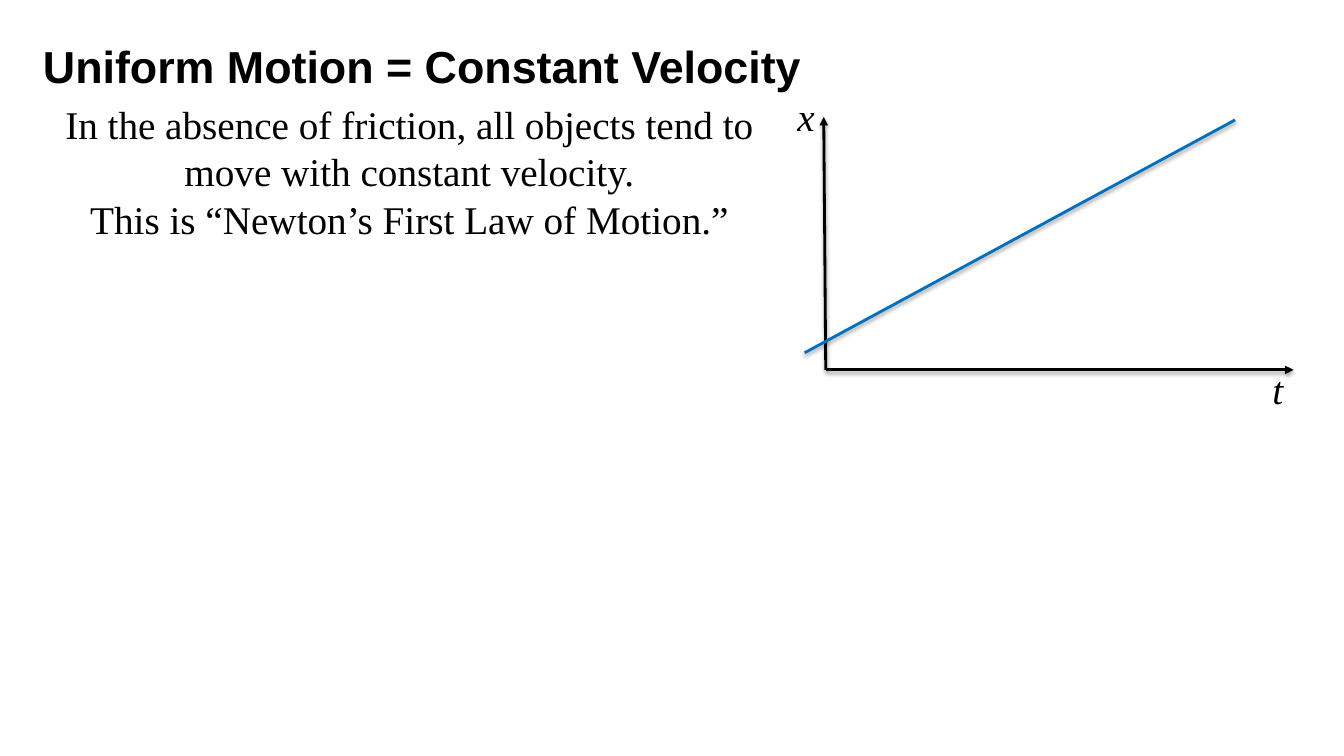
from lxml import etree
from pptx import Presentation
from pptx.dml.color import RGBColor
from pptx.enum.shapes import MSO_CONNECTOR
from pptx.enum.text import MSO_ANCHOR, MSO_AUTO_SIZE, PP_ALIGN
from pptx.oxml.ns import qn
from pptx.util import Inches, Pt

BLACK = RGBColor(0x00, 0x00, 0x00)
BLUE = RGBColor(0x00, 0x70, 0xC0)
SANS, SERIF = "Arial", "Times New Roman"

# Boxes and points are counted in cells of a square grid.
CELL = Inches(0.1)
TITLE_BOX = (1.9, 3.6, 80, 5.8)
LAW_BOX = (3.2, 9.5, 74.8, 15.1)
GRAPH_BOX = (78.1, 8.7, 50.2, 32.8)


def cells(*counts):
    return [round(count * CELL) for count in counts]


def add_text(page, box, lines, font, size, align=PP_ALIGN.CENTER,
             anchor=MSO_ANCHOR.TOP, wrap=True, bold=False, italic=False):
    frame = page.shapes.add_textbox(*cells(*box)).text_frame
    frame.word_wrap = wrap
    frame.auto_size = MSO_AUTO_SIZE.NONE
    frame.vertical_anchor = anchor
    for number, line in enumerate(lines):
        para = frame.add_paragraph() if number else frame.paragraphs[0]
        para.alignment = align
        span = para.add_run()
        span.text = line
        span.font.name = font
        span.font.size = Pt(size)
        span.font.bold = bold
        span.font.italic = italic
        span.font.color.rgb = BLACK


def add_shadow(line):
    """Give the line a soft shadow straight below it."""
    effects = etree.SubElement(line._element.spPr, qn("a:effectLst"))
    shadow = etree.SubElement(effects, qn("a:outerShdw"), blurRad=str(Pt(3.1)),
                              dist=str(Pt(1.6)), dir="5400000", rotWithShape="0")
    color = etree.SubElement(shadow, qn("a:srgbClr"), val=str(BLACK))
    etree.SubElement(color, qn("a:alpha"), val="38000")


def add_line(page, start, end, color, arrow=False):
    line = page.shapes.add_connector(MSO_CONNECTOR.STRAIGHT, *cells(*start, *end))
    line.line.color.rgb = color
    line.line.width = Pt(2)
    if arrow:
        etree.SubElement(line.line._get_or_add_ln(), qn("a:tailEnd"), type="triangle")
    add_shadow(line)


def add_title(page, box):
    add_text(page, box, ["Uniform Motion = Constant Velocity"], SANS, 32,
             anchor=MSO_ANCHOR.MIDDLE, bold=True)


def add_law(page, box):
    add_text(page, box, [
        "In the absence of friction, all objects tend to move with constant velocity.",
        "This is “Newton’s First Law of Motion.”",
    ], SERIF, 28)


def add_graph(page, box):
    """Draw position against time: two axes, their labels and the motion line."""
    left, top, width, height = box
    right, bottom = left + width, top + height
    origin = (left + 3.8, top + 28)
    for tip in ((left + 3.6, top + 2.9), (right, origin[1])):
        add_line(page, origin, tip, BLACK, arrow=True)
    label_height = 5.7
    for name, x, y, label_width in (("x", left, top, 3.8),
                                    ("t", right - 3.1, bottom - label_height, 3.1)):
        add_text(page, (x, y, label_width, label_height), [name], SERIF, 28,
                 align=PP_ALIGN.LEFT, wrap=False, italic=True)
    add_line(page, (left + 1.7, top + 26.3), (left + 44.4, top + 3.2), BLUE)


def main():
    deck = Presentation()
    deck.slide_width, deck.slide_height = Inches(13.33), Inches(7.5)
    page = deck.slides.add_slide(deck.slide_layouts[6])
    add_title(page, TITLE_BOX)
    add_graph(page, GRAPH_BOX)
    add_law(page, LAW_BOX)
    deck.save("out.pptx")


if __name__ == "__main__":
    main()
